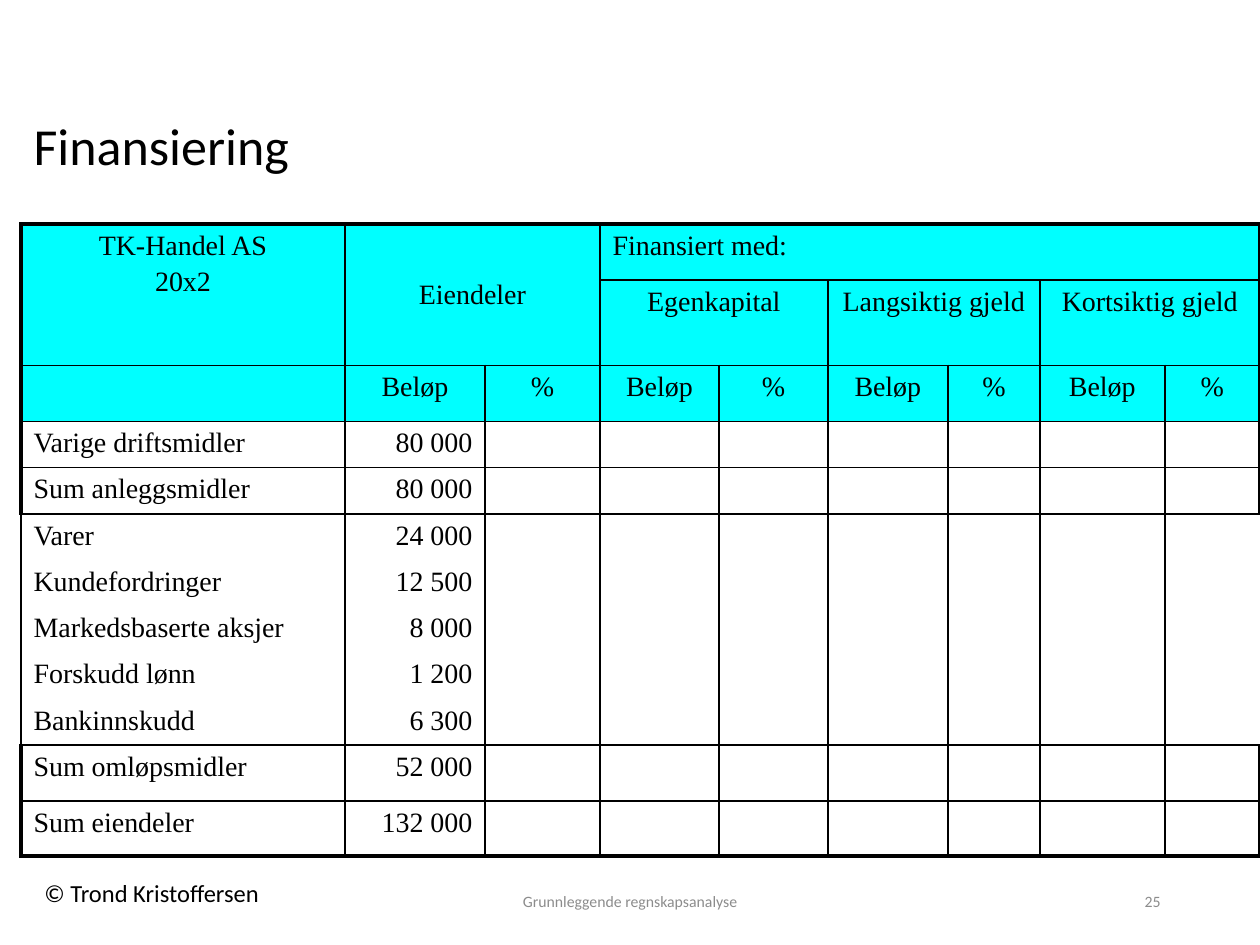
"""Build the financing table slide for TK-Handel AS."""
from lxml.etree import SubElement
from pptx import Presentation
from pptx.dml.color import RGBColor
from pptx.enum.text import MSO_ANCHOR as Anchor, MSO_AUTO_SIZE as AutoSize, PP_ALIGN as Align
from pptx.oxml.ns import qn
from pptx.util import Emu, Pt

PX = 914400 // 126
BLACK = RGBColor(0x00, 0x00, 0x00)
GREY = RGBColor(0x8C, 0x8C, 0x8C)
CYAN = RGBColor(0x00, 0xFF, 0xFF)
SANS, SERIF = "Calibri", "Times New Roman"
THIN, THICK = 1, 2.25

COLUMN_WIDTHS = [324, 140, 115, 119, 109, 120, 92, 125, 95]
ROW_HEIGHTS = [56, 81, 56, 43, 46, 43, 44, 44, 44, 44, 56, 55]
HEADER_ROWS = 3
OPEN_ROWS = range(5, 10)
HEADINGS = [
    (0, 0, 2, 1, ["TK-Handel AS", "20x2"], Align.CENTER),
    (0, 1, 2, 2, ["Eiendeler"], Align.CENTER),
    (0, 3, 1, 6, ["Finansiert med:"], Align.LEFT),
    (1, 3, 1, 2, ["Egenkapital"], Align.CENTER),
    (1, 5, 1, 2, ["Langsiktig gjeld"], Align.CENTER),
    (1, 7, 1, 2, ["Kortsiktig gjeld"], Align.CENTER),
]
ASSETS = [
    ("Varige driftsmidler", "80 000"),
    ("Sum anleggsmidler", "80 000"),
    ("Varer", "24 000"),
    ("Kundefordringer", "12 500"),
    ("Markedsbaserte aksjer", "8 000"),
    ("Forskudd lønn", "1 200"),
    ("Bankinnskudd", "6 300"),
    ("Sum omløpsmidler", "52 000"),
    ("Sum eiendeler", "132 000"),
]


def px(*lengths):
    return [Emu(length * PX) for length in lengths]


def add_run(paragraph, text, size, font, color):
    run = paragraph.add_run()
    run.text = text
    run.font.size = Pt(size)
    run.font.name = font
    run.font.color.rgb = color


def add_title(slide, text):
    title = slide.shapes.title
    title.left, title.top, title.width, title.height = px(21, 113, 1215, 71)
    frame = title.text_frame
    frame.vertical_anchor = Anchor.MIDDLE
    paragraph = frame.paragraphs[0]
    paragraph.alignment = Align.LEFT
    paragraph.line_spacing = 0.9
    add_run(paragraph, text, 29.7, SANS, BLACK)


def add_label(slide, box, text, size, color, align, anchor=Anchor.MIDDLE, wrap=True):
    shape = slide.shapes.add_textbox(*px(*box))
    frame = shape.text_frame
    frame.word_wrap = wrap
    frame.auto_size = AutoSize.NONE if wrap else AutoSize.SHAPE_TO_FIT_TEXT
    frame.vertical_anchor = anchor
    paragraph = frame.paragraphs[0]
    paragraph.alignment = align
    add_run(paragraph, text, size, SANS, color)


def write_cell(cell, lines, align):
    frame = cell.text_frame
    for index, line in enumerate(lines):
        paragraph = frame.add_paragraph() if index else frame.paragraphs[0]
        paragraph.alignment = align
        if index:
            paragraph.space_before = Pt(3.2)
        add_run(paragraph, line, 16, SERIF, BLACK)


def set_borders(cell, widths):
    properties = cell._tc.get_or_add_tcPr()
    for side, width in widths.items():
        line = SubElement(properties, qn(f"a:ln{side}"), w=str(Pt(width or THIN)))
        if width:
            fill = SubElement(line, qn("a:solidFill"))
            SubElement(fill, qn("a:srgbClr"), val=str(BLACK))
        else:
            SubElement(line, qn("a:noFill"))


def style_cell(cell, row, column):
    last_row, last_column = len(ROW_HEIGHTS) - 1, len(COLUMN_WIDTHS) - 1
    is_open = row in OPEN_ROWS
    at_right = column + cell.span_width - 1 >= last_column
    edge = THIN if is_open else THICK
    set_borders(cell, {
        "L": THIN if column else edge,
        "R": (0 if is_open else THICK) if at_right else THIN,
        "T": THICK if row == 0 else 0 if row in OPEN_ROWS[1:] else THIN,
        "B": THICK if row == last_row else 0 if row in OPEN_ROWS[:-1] else THIN,
    })
    if row < HEADER_ROWS:
        cell.fill.solid()
        cell.fill.fore_color.rgb = CYAN
    else:
        cell.fill.background()
    if not cell.text_frame.text:
        SubElement(cell.text_frame.paragraphs[0]._p, qn("a:endParaRPr"), sz="1600")


def add_financing_table(slide):
    box = px(21, 224, sum(COLUMN_WIDTHS), sum(ROW_HEIGHTS))
    table = slide.shapes.add_table(len(ROW_HEIGHTS), len(COLUMN_WIDTHS), *box).table
    table.first_row = table.horz_banding = False
    for column, width in zip(table.columns, px(*COLUMN_WIDTHS)):
        column.width = width
    for row, height in zip(table.rows, px(*ROW_HEIGHTS)):
        row.height = height

    for row, column, height, width, lines, align in HEADINGS:
        cell = table.cell(row, column)
        cell.merge(table.cell(row + height - 1, column + width - 1))
        write_cell(cell, lines, align)
    table.cell(0, 1).vertical_anchor = Anchor.MIDDLE
    for column in range(1, len(COLUMN_WIDTHS)):
        write_cell(table.cell(2, column), ["Beløp" if column % 2 else "%"], Align.CENTER)
    for row, (name, amount) in enumerate(ASSETS, HEADER_ROWS):
        write_cell(table.cell(row, 0), [name], Align.LEFT)
        write_cell(table.cell(row, 1), [amount], Align.RIGHT)

    for row in range(len(ROW_HEIGHTS)):
        for column in range(len(COLUMN_WIDTHS)):
            style_cell(table.cell(row, column), row, column)


def main():
    presentation = Presentation()
    presentation.slide_width, presentation.slide_height = px(1260, 945)
    slide = presentation.slides.add_slide(presentation.slide_layouts[5])
    add_label(slide, (32, 872, 246, 42), "© Trond Kristoffersen", 14, BLACK,
              Align.LEFT, Anchor.TOP, wrap=False)
    add_title(slide, "Finansiering")
    add_label(slide, (417, 876, 426, 50), "Grunnleggende regnskapsanalyse", 9, GREY, Align.CENTER)
    add_label(slide, (890, 876, 283, 50), "25", 9, GREY, Align.RIGHT)
    add_financing_table(slide)
    presentation.save("out.pptx")


if __name__ == "__main__":
    main()
